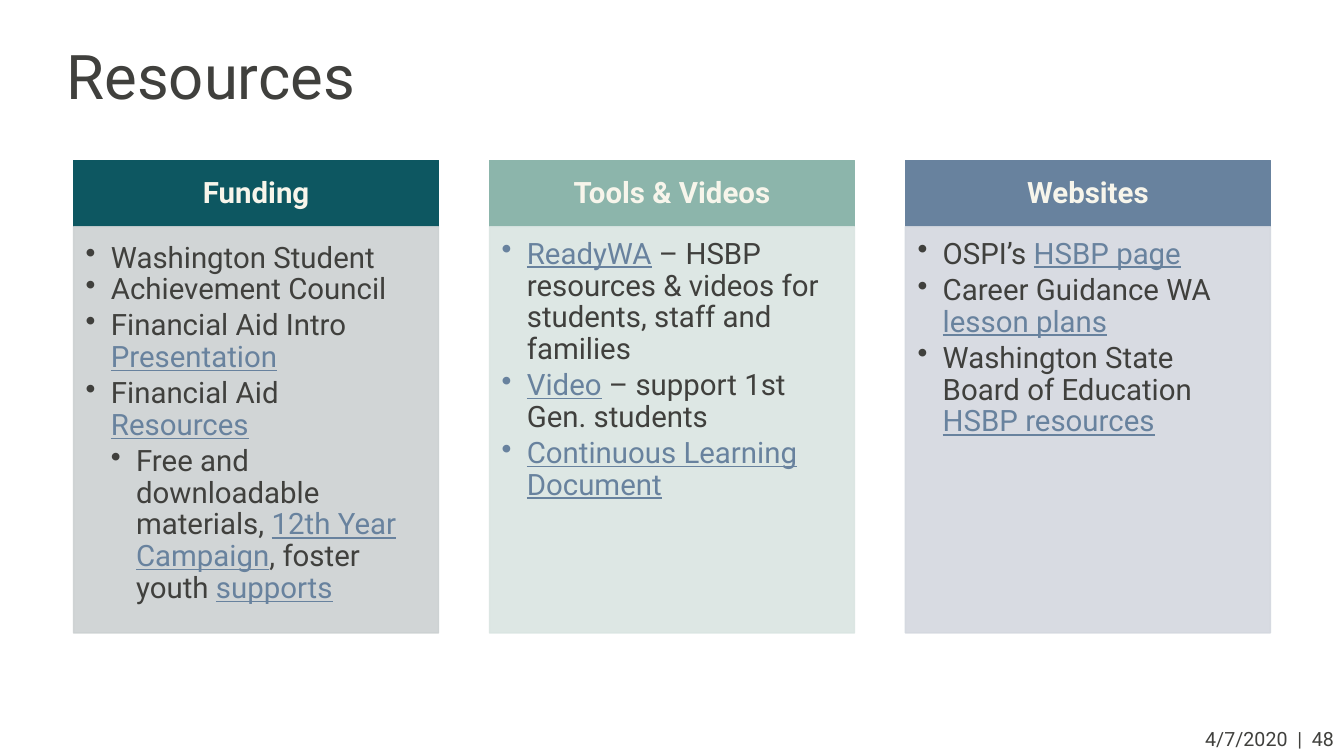
"""Build the Resources slide with three columns of links."""
from lxml.etree import SubElement
from pptx import Presentation
from pptx.dml.color import RGBColor
from pptx.enum.shapes import MSO_SHAPE
from pptx.enum.text import MSO_ANCHOR, PP_ALIGN
from pptx.oxml.ns import qn
from pptx.util import Inches, Pt

INK = RGBColor(0x40, 0x40, 0x3D)
CREAM = RGBColor(0xF7, 0xF5, 0xEB)
TEAL = RGBColor(0x0D, 0x57, 0x61)
SAGE = RGBColor(0x8C, 0xB5, 0xAB)
SLATE = RGBColor(0x68, 0x82, 0x9E)
PALE_TEAL = RGBColor(0xCC, 0xD1, 0xD2)
PALE_SAGE = RGBColor(0xDA, 0xE5, 0xE2)
PALE_SLATE = RGBColor(0xD4, 0xD8, 0xDF)

# Each item is an outline level and its text; text between bars is a link.
COLUMNS = [
    ("Funding", TEAL, PALE_TEAL, [
        (0, "Washington Student"),
        (0, "Achievement Council"),
        (0, "Financial Aid Intro |Presentation|"),
        (0, "Financial Aid |Resources|"),
        (1, "Free and downloadable materials, |12th Year Campaign|"
            ", foster youth |supports|"),
    ]),
    ("Tools & Videos", SAGE, PALE_SAGE, [
        (0, "|ReadyWA| – HSBP resources & videos for students, staff and families"),
        (0, "|Video| – support 1st Gen. students"),
        (0, "|Continuous Learning Document|"),
    ]),
    ("Websites", SLATE, PALE_SLATE, [
        (0, "OSPI’s |HSBP page|"),
        (0, "Career Guidance WA |lesson plans|"),
        (0, "Washington State Board of Education |HSBP resources|"),
    ]),
]
COLUMN_LEFT, COLUMN_STEP, COLUMN_WIDTH = 0.73, 4.125, 3.62


def add_panel(left, top, height, color, insets, anchor):
    panel = slide.shapes.add_shape(
        MSO_SHAPE.RECTANGLE, Inches(left), Inches(top), Inches(COLUMN_WIDTH), Inches(height))
    panel.shadow.inherit = False
    panel.fill.solid()
    panel.fill.fore_color.rgb = color
    panel.line.color.rgb = color
    panel.line.width = Pt(1)
    frame = panel.text_frame
    frame.word_wrap = True
    frame.vertical_anchor = anchor
    (frame.margin_left, frame.margin_top,
     frame.margin_right, frame.margin_bottom) = [Inches(inset) for inset in insets]
    return panel


def style(font, size, color):
    font.name = "Roboto"
    font.size = Pt(size)
    font.color.rgb = color


deck = Presentation()
deck.slide_width, deck.slide_height = Inches(13.33), Inches(7.5)
slide = deck.slides.add_slide(deck.slide_layouts[5])

title = slide.shapes.title
title.left, title.top, title.width, title.height = (
    Inches(0.56), Inches(0.32), Inches(3.38), Inches(0.93))
title.text_frame.text = "Resources"
title.text_frame.vertical_anchor = MSO_ANCHOR.MIDDLE
title.text_frame.paragraphs[0].alignment = PP_ALIGN.LEFT
title.text_frame.paragraphs[0].line_spacing = 0.9
style(title.text_frame.paragraphs[0].runs[0].font, 44, INK)

for index, (heading, strong, pale, items) in enumerate(COLUMNS):
    left = COLUMN_LEFT + index * COLUMN_STEP
    header = add_panel(left, 1.59, 0.66, strong, (0.16, 0.09, 0.16, 0.09), MSO_ANCHOR.MIDDLE)
    header.text_frame.text = heading
    heading_line = header.text_frame.paragraphs[0]
    heading_line.alignment = PP_ALIGN.CENTER
    heading_line.line_spacing = 0.9
    style(heading_line.runs[0].font, 21, CREAM)
    heading_line.runs[0].font.bold = True

    body = add_panel(left, 2.25, 4.03, pale, (0.12, 0.12, 0.16, 0.18), MSO_ANCHOR.TOP)
    for tint in body._element.spPr.iter(qn("a:srgbClr")):
        SubElement(tint, qn("a:alpha"), val="90000")
    for number, (level, text) in enumerate(items):
        entry = body.text_frame.paragraphs[0] if number == 0 else body.text_frame.add_paragraph()
        entry.alignment = PP_ALIGN.LEFT
        entry.level = level + 1
        if text == "Washington Student":
            entry.line_spacing = 1.0
        else:
            entry.line_spacing = 0.9
            entry.space_after = Pt(3.15)
        properties = entry._p.get_or_add_pPr()
        properties.set("marL", str(Inches(0.25 * (level + 1))))
        properties.set("indent", str(-Inches(0.25)))
        SubElement(properties, qn("a:buChar"), char="•")
        for part, words in enumerate(text.split("|")):
            if words:
                is_link = part % 2 == 1
                run = entry.add_run()
                run.text = words
                style(run.font, 21, SLATE if is_link else INK)
                run.font.underline = is_link

footer = slide.shapes.add_textbox(Inches(11.62), Inches(7.16), Inches(1.71), Inches(0.34))
footer.text_frame.word_wrap = True
footer.text_frame.text = "4/7/2020  |  48"
footer.text_frame.paragraphs[0].alignment = PP_ALIGN.RIGHT
style(footer.text_frame.paragraphs[0].runs[0].font, 14, INK)

deck.save("out.pptx")
